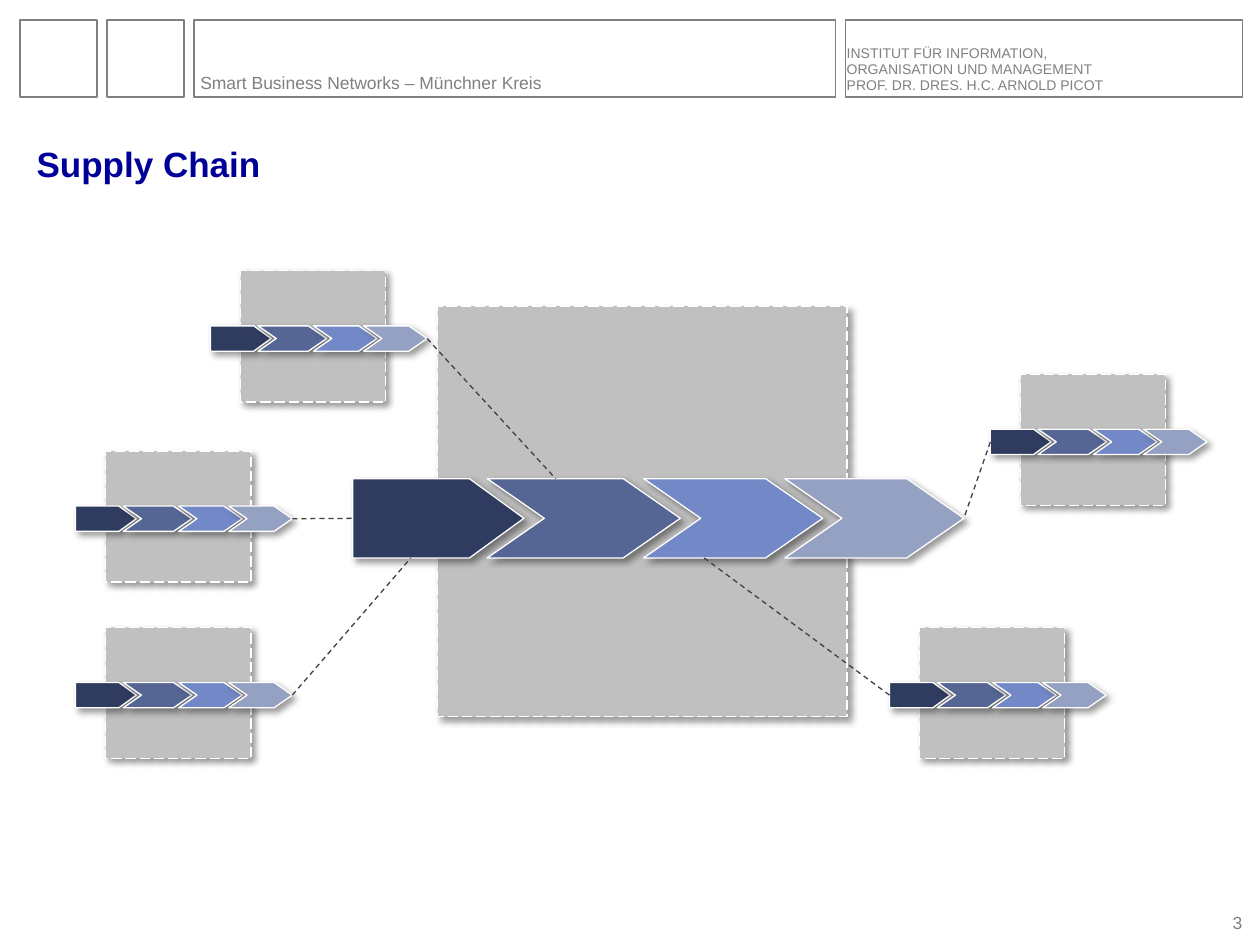
from lxml.etree import SubElement
from pptx import Presentation
from pptx.dml.color import RGBColor
from pptx.enum.dml import MSO_LINE
from pptx.enum.shapes import MSO_CONNECTOR, MSO_SHAPE
from pptx.enum.text import MSO_ANCHOR, PP_ALIGN
from pptx.oxml.ns import qn
from pptx.util import Inches, Pt

COLORS = {
    "gray": "808080", "title": "000099", "panel": "C0C0C0", "edge": "FFFFFF",
    "link": "404040", "shadow": "000000",
    "stage1": "2F3B5F", "stage2": "556594", "stage3": "7288C7", "stage4": "95A1C2",
}
FONT = "Arial"
STAGES = [
    (MSO_SHAPE.PENTAGON, 0, 0.28, 0.687, "stage1"),
    (MSO_SHAPE.CHEVRON, 0.22, 0.316, 0.72, "stage2"),
    (MSO_SHAPE.CHEVRON, 0.476, 0.293, 0.72, "stage3"),
    (MSO_SHAPE.CHEVRON, 0.707, 0.293, 0.72, "stage4"),
]
ARROW_TOP, ARROW_HEIGHT = 0.42, 0.193
ARROW_MID, ARROW_BOTTOM = ARROW_TOP + ARROW_HEIGHT / 2, ARROW_TOP + ARROW_HEIGHT
MAIN = (2.8, 2.43, 4.85, 3.26)
PARTNERS = {
    name: (x, y, 1.72, 1.04)
    for name, x, y in [
        ("supplier_low", 0.6, 4.98), ("supplier_mid", 0.6, 3.58),
        ("supplier_top", 1.67, 2.15), ("customer_low", 7.06, 4.98),
        ("customer_top", 7.86, 2.97),
    ]
}
LINKS = [
    ("supplier_top", 1, 0.332, ARROW_TOP),
    ("supplier_mid", 1, 0, ARROW_MID),
    ("supplier_low", 1, 0.095, ARROW_BOTTOM),
    ("customer_top", 0, 1, ARROW_MID),
    ("customer_low", 0, 0.575, ARROW_BOTTOM),
]


def rgb(name):
    """Return the named colour."""
    return RGBColor.from_string(COLORS[name])


def point(box, x, y):
    """Return the spot at shares x and y of a box."""
    return Inches(box[0] + x * box[2]), Inches(box[1] + y * box[3])


def place(box, x, y, w, h):
    """Return the part of a box given as shares of its size."""
    return *point(box, x, y), Inches(w * box[2]), Inches(h * box[3])


def add_run(p, text, size, color, bold=False):
    """Add one formatted run to a paragraph."""
    r = p.add_run()
    r.text = text
    r.font.name, r.font.size, r.font.bold = FONT, Pt(size), bold
    r.font.color.rgb = rgb(color)


def add_text(s, box, lines, size, align=PP_ALIGN.LEFT, wrap=True):
    """Add gray bottom-anchored text with one paragraph for each line."""
    tf = s.shapes.add_textbox(*map(Inches, box)).text_frame
    tf.word_wrap, tf.vertical_anchor = wrap, MSO_ANCHOR.BOTTOM
    tf.margin_left = tf.margin_right = tf.margin_top = tf.margin_bottom = 0
    for i, line in enumerate(lines):
        p = tf.add_paragraph() if i else tf.paragraphs[0]
        p.alignment, p.line_spacing = align, 0.95
        add_run(p, line, size, "gray")


def add_header(s, box):
    """Draw the four header frames and their two texts."""
    left, top, width, height = box
    gap = 0.08
    x = left
    for w in (height, height, 5.09, 3.15):
        sp = s.shapes.add_shape(MSO_SHAPE.RECTANGLE, *map(Inches, (x, top, w, height)))
        sp.fill.background()
        sp.line.color.rgb = rgb("gray")
        sp.line.width = Pt(0.75)
        sp.shadow.inherit = False
        x += w + gap
    base = top + 0.96 * height
    add_text(s, (left + 1.43, base - 0.41, 5.37, 0.41),
             ["Smart Business Networks – Münchner Kreis"], 10)
    add_text(s, (left + 6.56, base - 0.46, 2.6, 0.46),
             ["INSTITUT FÜR INFORMATION,", "ORGANISATION UND MANAGEMENT",
              "PROF. DR. DRES. H.C. ARNOLD PICOT"], 8)


def add_title(s, box):
    """Fill and place the title placeholder."""
    sp = s.shapes.title
    sp.left, sp.top, sp.width, sp.height = map(Inches, box)
    tf = sp.text_frame
    tf.vertical_anchor = MSO_ANCHOR.MIDDLE
    p = tf.paragraphs[0]
    p.alignment = PP_ALIGN.LEFT
    add_run(p, "Supply Chain", 20, "title", True)


def add_part(group, kind, area, fill):
    """Add one filled part with a white edge and a soft shadow."""
    sp = group.shapes.add_shape(kind, *area)
    sp.fill.solid()
    sp.fill.fore_color.rgb = rgb(fill)
    sp.line.color.rgb = rgb("edge")
    sp.line.width = Pt(0.75)
    sp.shadow.inherit = False
    effects = sp._element.spPr.find(qn("a:effectLst"))
    shadow = SubElement(effects, qn("a:outerShdw"), blurRad=str(Pt(4)),
                        dist=str(Pt(3)), dir="2700000", algn="tl", rotWithShape="0")
    color = SubElement(shadow, qn("a:srgbClr"), val=COLORS["shadow"])
    SubElement(color, qn("a:alpha"), val="40000")
    return sp


def add_chain(s, box):
    """Draw a company panel crossed by its four-stage chain."""
    group = s.shapes.add_group_shape()
    panel = add_part(group, MSO_SHAPE.RECTANGLE, place(box, 0.139, 0, 0.67, 1), "panel")
    panel.line.dash_style = MSO_LINE.LONG_DASH
    for kind, x, w, adj, fill in STAGES:
        sp = add_part(group, kind, place(box, x, ARROW_TOP, w, ARROW_HEIGHT), fill)
        sp.adjustments[0] = adj


def add_link(s, start, end):
    """Draw a dashed line between two points."""
    line = s.shapes.add_connector(MSO_CONNECTOR.STRAIGHT, *start, *end)
    line.line.color.rgb = rgb("link")
    line.line.width = Pt(0.75)
    line.line.dash_style = MSO_LINE.DASH
    SubElement(line._element.spPr, qn("a:effectLst"))


def main():
    """Build the supply chain slide."""
    prs = Presentation()
    prs.slide_width, prs.slide_height = Inches(10), Inches(7.5)
    s = prs.slides.add_slide(prs.slide_layouts[5])
    add_header(s, (0.16, 0.16, 9.68, 0.61))
    add_title(s, (0.19, 1.08, 8.98, 0.44))
    add_text(s, (9.58, 7.24, 0.28, 0.17), ["3"], 10, PP_ALIGN.RIGHT, False)
    for box in (MAIN, *PARTNERS.values()):
        add_chain(s, box)
    for name, side, x, y in LINKS:
        add_link(s, point(PARTNERS[name], side, ARROW_MID), point(MAIN, x, y))
    prs.save("out.pptx")


if __name__ == "__main__":
    main()
